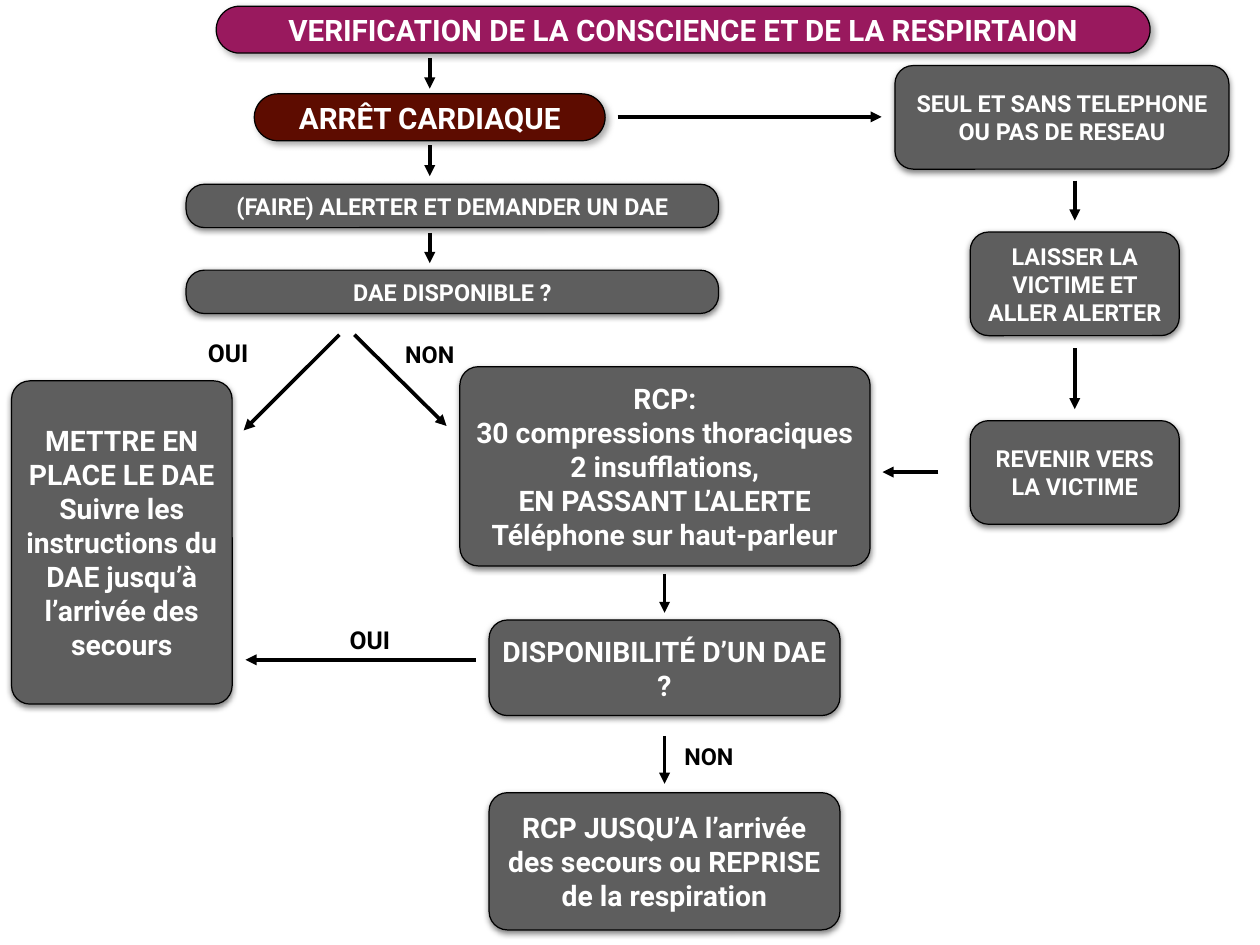
"""Build the one-slide flowchart for cardiac arrest first aid."""
from lxml.etree import SubElement
from pptx import Presentation
from pptx.dml.color import RGBColor
from pptx.enum.shapes import MSO_CONNECTOR, MSO_SHAPE
from pptx.enum.text import MSO_ANCHOR, MSO_AUTO_SIZE, PP_ALIGN
from pptx.oxml.ns import qn
from pptx.util import Inches, Pt

COLOURS = {
    "check": "99195E",
    "arrest": "5D0C00",
    "step": "5E5E5E",
    "ink": "000000",
    "paper": "FFFFFF",
    "soft": "929292",
}
CELL = Inches(0.1)
COLUMNS, ROWS = 142.2, 106.7
ALERT_AXIS, CPR_AXIS, ALONE_AXIS = 48.5, 75, 121.3
CORNER = 2.08


def colour(name):
    return RGBColor.from_string(COLOURS[name])


def write(frame, lines, size, ink):
    frame.vertical_anchor = MSO_ANCHOR.MIDDLE
    frame.margin_left = frame.margin_right = Inches(0.06)
    frame.margin_top = frame.margin_bottom = Inches(0.06)
    frame.text = "\n".join(lines)
    for paragraph in frame.paragraphs:
        paragraph.alignment = PP_ALIGN.CENTER
        paragraph.font.name = "Roboto"
        paragraph.font.size = Pt(size)
        paragraph.font.bold = True
        paragraph.font.color.rgb = colour(ink)


deck = Presentation()
deck.slide_width, deck.slide_height = int(COLUMNS * CELL), int(ROWS * CELL)
slide = deck.slides.add_slide(deck.slide_layouts[6])

steps = [
    ("check", 24.4, 0.7, 105.4, 5.3, 24,
     ["VERIFICATION DE LA CONSCIENCE ET DE LA RESPIRTAION"]),
    ("arrest", 28.7, 10.6, 39.6, 5.3, 24, ["ARRÊT CARDIAQUE"]),
    ("step", 21, 20.8, 60.1, 4.9, 19, ["(FAIRE) ALERTER ET DEMANDER UN DAE"]),
    ("step", 21, 30.5, 60.1, 4.9, 19, ["DAE DISPONIBLE ?"]),
    ("step", 1.3, 43, 24.9, 36.5, 23,
     ["METTRE EN PLACE LE DAE",
      "Suivre les instructions du DAE jusqu’à l’arrivée des secours"]),
    ("step", 51.9, 41.4, 46.3, 22.5, 23,
     ["RCP:", "30 compressions thoraciques", "2 insufflations,",
      "EN PASSANT L’ALERTE", "Téléphone sur haut-parleur"]),
    ("step", 55.2, 70, 39.6, 10.8, 23, ["DISPONIBILITÉ D’UN DAE ?"]),
    ("step", 55.2, 89.5, 39.6, 15.5, 23,
     ["RCP JUSQU’A l’arrivée des secours ou REPRISE de la respiration"]),
    ("step", 101, 7.4, 37.7, 11.7, 19, ["SEUL ET SANS TELEPHONE OU PAS DE RESEAU"]),
    ("step", 109.5, 26.2, 23.6, 11.7, 19, ["LAISSER LA VICTIME ET ALLER ALERTER"]),
    ("step", 109.5, 47.5, 23.6, 11.7, 19, ["REVENIR VERS LA VICTIME"]),
]
for role, left, top, width, height, size, lines in steps:
    step = slide.shapes.add_shape(
        MSO_SHAPE.ROUNDED_RECTANGLE,
        *(int(cells * CELL) for cells in (left, top, width, height)))
    plain = role == "step"
    step.adjustments[0] = CORNER / min(width, height) if plain else 0.5
    step.fill.solid()
    step.fill.fore_color.rgb = colour(role)
    step.line.color.rgb = colour("ink")
    step.line.width = Pt(1)
    step.shadow.inherit = False
    tint, opacity, distance, angle = ("ink", 50, 2, 90) if plain else ("soft", 75, 3, 45)
    effects = step._element.spPr.find(qn("a:effectLst"))
    shadow = SubElement(effects, qn("a:outerShdw"), blurRad=str(Pt(5)),
                        dist=str(Pt(distance)), dir=str(angle * 60000), rotWithShape="0")
    shade = SubElement(shadow, qn("a:srgbClr"), val=COLOURS[tint])
    SubElement(shade, qn("a:alpha"), val=str(opacity * 1000))
    step.text_frame.word_wrap = True
    write(step.text_frame, lines, size, "paper")

arrows = [
    (ALERT_AXIS, 6.6, ALERT_AXIS, 10),
    (ALERT_AXIS, 16.4, ALERT_AXIS, 19.9),
    (ALERT_AXIS, 26.3, ALERT_AXIS, 29.7),
    (38.3, 37.8, 27.5, 48.6),
    (40, 37.8, 50.4, 48.1),
    (CPR_AXIS, 64.8, CPR_AXIS, 69.2),
    (CPR_AXIS, 83.1, CPR_AXIS, 88.5),
    (53.7, 74.5, 27.7, 74.5),
    (69.7, 13.2, 99.5, 13.2),
    (ALONE_AXIS, 20.4, ALONE_AXIS, 24.9),
    (ALONE_AXIS, 39.3, ALONE_AXIS, 46.2),
    (105.9, 53.3, 99.6, 53.3),
]
for ends in arrows:
    arrow = slide.shapes.add_connector(
        MSO_CONNECTOR.STRAIGHT, *(int(cells * CELL) for cells in ends))
    arrow.line.color.rgb = colour("ink")
    arrow.line.width = Pt(3)
    SubElement(arrow.line._get_or_add_ln(), qn("a:tailEnd"), type="triangle")
    SubElement(arrow._element.spPr, qn("a:effectLst"))

answers = [
    ("OUI", 22.6, 37.6, 6.3, 20),
    ("NON", 44.9, 37.7, 7.2, 19),
    ("OUI", 38.6, 70, 6.3, 20),
    ("NON", 76.4, 83.1, 7.2, 19),
]
for word, left, top, width, size in answers:
    answer = slide.shapes.add_textbox(
        *(int(cells * CELL) for cells in (left, top, width, 4.5)))
    answer.text_frame.word_wrap = False
    answer.text_frame.auto_size = MSO_AUTO_SIZE.SHAPE_TO_FIT_TEXT
    write(answer.text_frame, [word], size, "ink")

deck.save("out.pptx")
